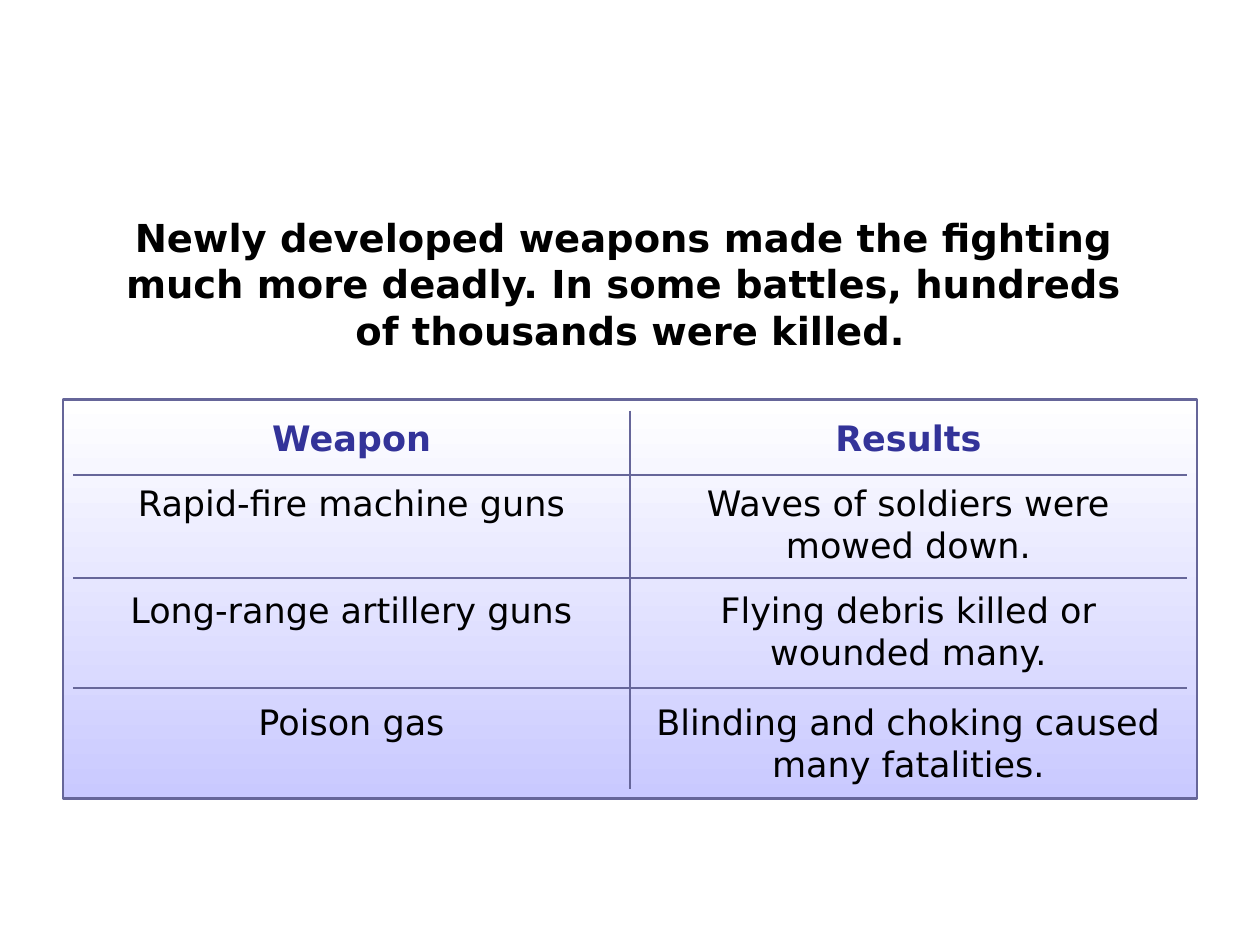
from lxml import etree
from pptx import Presentation
from pptx.dml.color import RGBColor
from pptx.enum import shapes, text
from pptx.oxml import ns
from pptx.util import Pt

FONT = "DejaVu Sans"
RULE = "666699"


def rgb(hex_color):
    return RGBColor.from_string(hex_color)


def style(paragraph, size, color, bold):
    paragraph.alignment = text.PP_ALIGN.CENTER
    for run in paragraph.runs:
        run.font.name = FONT
        run.font.size = Pt(size)
        run.font.bold = bold
        run.font.color.rgb = rgb(color)


prs = Presentation()
prs.slide_width, prs.slide_height = Pt(720), Pt(540)
slide = prs.slides.add_slide(prs.slide_layouts[5])

# Statement above the weapons
statement = slide.shapes.title
statement.left, statement.top = Pt(36), Pt(118.8)
statement.width, statement.height = Pt(648), Pt(86.4)
statement.text_frame.text = (
    "Newly developed weapons made the fighting \v"
    "much more deadly. In some battles, hundreds \v"
    "of thousands were killed."
)
statement.text_frame.vertical_anchor = text.MSO_ANCHOR.TOP
statement.text_frame.auto_size = text.MSO_AUTO_SIZE.SHAPE_TO_FIT_TEXT
style(statement.text_frame.paragraphs[0], 22, "000000", True)

# Gradient panel
panel = slide.shapes.add_shape(
    shapes.MSO_SHAPE.RECTANGLE, Pt(36), Pt(228.2), Pt(648), Pt(228.2)
)
panel.shadow.inherit = False
panel.fill.gradient()
panel.fill.gradient_angle = 270
for stop, color, position in zip(panel.fill.gradient_stops, ("FFFFFF", "C9C9FF"), (0, 1)):
    stop.color.rgb = rgb(color)
    stop.position = position
panel.line.color.rgb = rgb(RULE)
panel.line.width = Pt(1.5)

# Weapons and their results
left, middle, right = 41.8, 360, 678.2
top, bottom = 234.7, 450.7
rows = [
    (top, "Weapon", "Results"),
    (264.2, "Rapid-fire machine guns", "Waves of soldiers were mowed down."),
    (325.4, "Long-range artillery guns", "Flying debris killed or wounded many."),
    (389.5, "Poison gas", "Blinding and choking caused many fatalities."),
]
for row_top, *entries in rows:
    header = row_top == top
    for entry_left, entry in zip((left, middle), entries):
        box = slide.shapes.add_textbox(
            Pt(entry_left), Pt(row_top), Pt(middle - left), Pt(31 if header else 69.8)
        )
        frame = box.text_frame
        frame.word_wrap = True
        frame.text = entry
        if header:
            frame.vertical_anchor = text.MSO_ANCHOR.MIDDLE
        else:
            frame.margin_left = frame.margin_right = Pt(10.8)
            frame.margin_top = frame.margin_bottom = Pt(10.8)
        frame.paragraphs[0].space_before = Pt(1.5)
        style(frame.paragraphs[0], 20, "333399" if header else "000000", header)

# Rules between the columns and the rows
rules = [(middle, top, middle, bottom)]
rules += [(left, y, right, y) for y in (271.4, 330.4, 393.1)]
for ends in rules:
    rule = slide.shapes.add_connector(
        shapes.MSO_CONNECTOR.STRAIGHT, *(Pt(end) for end in ends)
    )
    rule.line.color.rgb = rgb(RULE)
    rule.line.width = Pt(1)
    etree.SubElement(rule._element.spPr, ns.qn("a:effectLst"))

prs.save("out.pptx")
